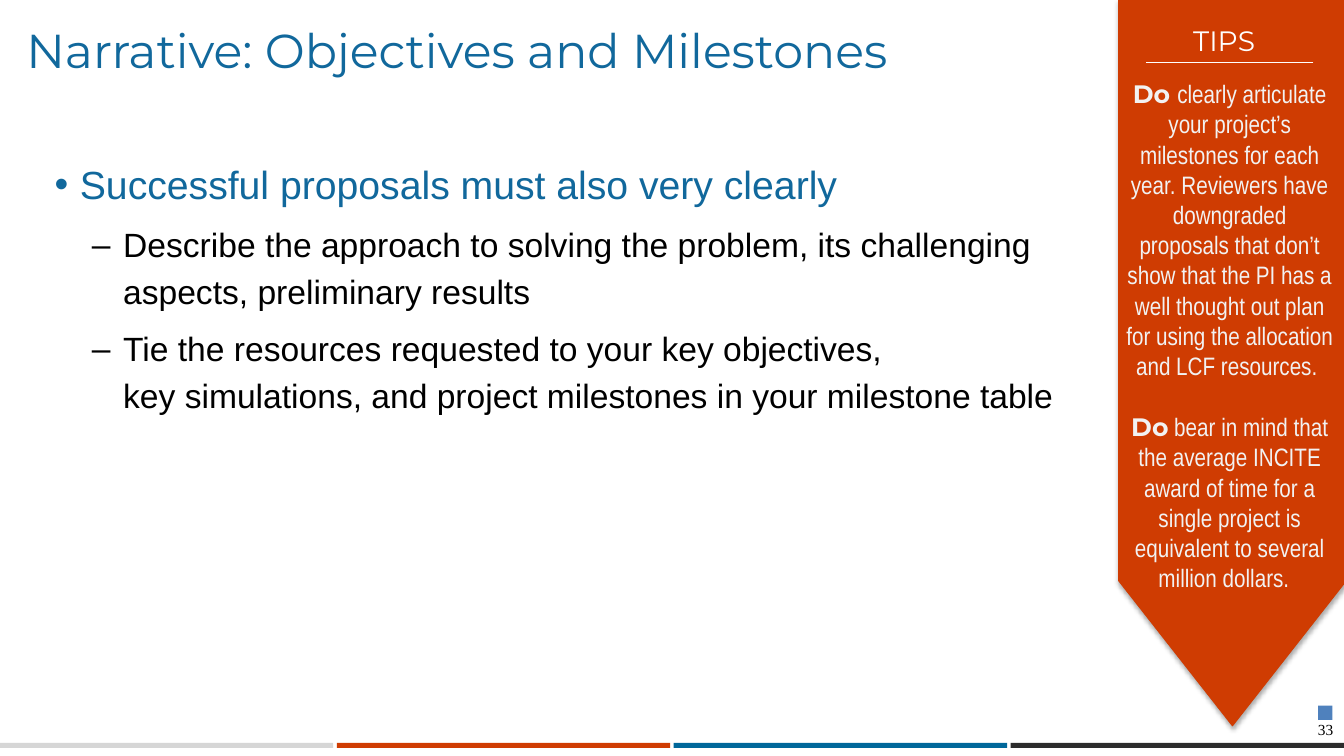
from dataclasses import dataclass

from lxml.etree import SubElement
from pptx import Presentation
from pptx.dml.color import RGBColor
from pptx.enum.shapes import MSO_CONNECTOR, MSO_SHAPE
from pptx.enum.text import MSO_ANCHOR, MSO_AUTO_SIZE, PP_ALIGN
from pptx.oxml.ns import qn
from pptx.util import Cm, Pt

BLUE = RGBColor(0x11, 0x68, 0x9C)
NAVY = RGBColor(0x00, 0x67, 0x9A)
RUST = RGBColor(0xCF, 0x3C, 0x02)
SILVER = RGBColor(0xD6, 0xD6, 0xD6)
DARK = RGBColor(0x2C, 0x2C, 0x2C)
STEEL = RGBColor(0x4F, 0x81, 0xBD)
PALE = RGBColor(0xF2, 0xF2, 0xF2)
WHITE = RGBColor(0xFF, 0xFF, 0xFF)
BLACK = RGBColor(0, 0, 0)


@dataclass
class Box:
    left: float
    top: float
    width: float
    height: float

    def place(self) -> tuple:
        return Cm(self.left), Cm(self.top), Cm(self.width), Cm(self.height)


@dataclass
class Point:
    text: str
    level: int
    mark: str
    size: int
    color: RGBColor
    left: float
    hang: float
    before: int


@dataclass
class Tip:
    lead: str
    text: str
    before: int


POINTS = [
    Point("Successful proposals must also very clearly",
          0, "•", 28, BLUE, 0.64, 0.64, 0),
    Point("Describe the approach to solving the problem, its challenging \n"
          "aspects, preliminary results",
          1, "–", 24, BLACK, 1.73, 0.79, 8),
    Point("Tie the resources requested to your key objectives, \n"
          "key simulations, and project milestones in your milestone table",
          1, "–", 24, BLACK, 1.73, 0.79, 8),
]
TIPS = [
    Tip("Do ", "clearly articulate your project’s milestones for each year. "
        "Reviewers have downgraded proposals that don’t show that the PI has "
        "a well thought out plan for using the allocation and LCF resources. ", 0),
    Tip("Do", " bear in mind that the average INCITE award of time for a "
        "single project is equivalent to several million dollars.  ", 22),
]


def style(font, name: str, size: int, color: RGBColor) -> None:
    font.name, font.size = name, Pt(size)
    font.color.rgb = color


def add_block(slide, kind, box: Box, color: RGBColor):
    shape = slide.shapes.add_shape(kind, *box.place())
    shape.shadow.inherit = False
    shape.fill.solid()
    shape.fill.fore_color.rgb = color
    shape.line.fill.background()
    return shape


def add_text(slide, box: Box, pad: bool = True):
    frame = slide.shapes.add_textbox(*box.place()).text_frame
    frame.word_wrap = True
    if not pad:
        frame.margin_left = frame.margin_right = 0
        frame.margin_top = frame.margin_bottom = 0
    return frame


def move(shape, box: Box):
    shape.left, shape.top, shape.width, shape.height = box.place()
    shape.text_frame.auto_size = MSO_AUTO_SIZE.NONE
    return shape.text_frame


def add_point(para, point: Point) -> None:
    para.text, para.level = point.text, point.level
    props = para._p.get_or_add_pPr()
    props.set("marL", str(Cm(point.left)))
    props.set("indent", str(-Cm(point.hang)))
    tint = SubElement(props, qn("a:buClr"))
    SubElement(tint, qn("a:srgbClr"), val=str(point.color))
    SubElement(props, qn("a:buFont"), typeface="Arial")
    SubElement(props, qn("a:buChar"), char=point.mark)
    para.line_spacing = 1.15
    para.space_before = Pt(point.before)
    style(para.font, "Arial", point.size, point.color)


def add_shade(shape) -> None:
    effects = shape._element.spPr.find(qn("a:effectLst"))
    shade = SubElement(effects, qn("a:outerShdw"), blurRad=str(Pt(3.1)),
                       dist=str(Pt(1.8)), dir="5400000", rotWithShape="0")
    tint = SubElement(shade, qn("a:srgbClr"), val=str(BLACK))
    SubElement(tint, qn("a:alpha"), val="32000")


def main() -> None:
    deck = Presentation()
    deck.slide_width, deck.slide_height = Cm(33.87), Cm(19.05)
    slide = deck.slides.add_slide(deck.slide_layouts[1])

    # Footer stripe and page number
    for i, color in enumerate((SILVER, RUST, NAVY, DARK)):
        add_block(slide, MSO_SHAPE.RECTANGLE, Box(8.49 * i, 18.72, 8.4, 0.13), color)
    page = add_text(slide, Box(31.9, 18.21, 1.7, 0.43), pad=False).paragraphs[0]
    page.text, page.alignment, page.line_spacing = "33", PP_ALIGN.RIGHT, 0.9
    style(page.font, "Times New Roman", 11, BLACK)

    # Title
    frame = move(slide.shapes.title, Box(0.41, 0.48, 30.48, 1.65))
    frame.vertical_anchor = MSO_ANCHOR.MIDDLE
    title = frame.paragraphs[0]
    title.text = "Narrative: Objectives and Milestones"
    title.alignment, title.line_spacing = PP_ALIGN.LEFT, 0.95
    style(title.font, "Montserrat", 34, BLUE)

    # Body list
    frame = move(slide.placeholders[1], Box(1.12, 3.73, 29.77, 8.36))
    for i, point in enumerate(POINTS):
        add_point(frame.add_paragraph() if i else frame.paragraphs[0], point)

    # Tips banner
    banner = add_block(slide, MSO_SHAPE.FLOWCHART_OFFPAGE_CONNECTOR,
                       Box(28.19, 0, 5.74, 18.29), RUST)
    banner.line.color.rgb, banner.line.width = RUST, Pt(0.75)
    add_shade(banner)
    head = add_text(slide, Box(29.82, 0.48, 2.34, 1.12)).paragraphs[0]
    head.text = "TIPS"
    style(head.font, "Montserrat", 20, WHITE)
    rule = slide.shapes.add_connector(MSO_CONNECTOR.STRAIGHT,
                                      Cm(33.1), Cm(1.57), Cm(28.88), Cm(1.57))
    rule.line.color.rgb, rule.line.width = WHITE, Pt(0.75)
    SubElement(rule._element.spPr, qn("a:effectLst"))

    # Tips text
    frame = add_text(slide, Box(28.12, 1.85, 5.74, 13.34))
    for i, tip in enumerate(TIPS):
        para = frame.add_paragraph() if i else frame.paragraphs[0]
        para.alignment, para.space_before = PP_ALIGN.CENTER, Pt(tip.before)
        for text, name, bold in ((tip.lead, "Montserrat", True),
                                 (tip.text, "Arial Narrow", False)):
            run = para.add_run()
            run.text, run.font.bold = text, bold
            style(run.font, name, 18, PALE)

    # Corner square
    add_block(slide, MSO_SHAPE.RECTANGLE, Box(33.22, 17.78, 0.36, 0.36), STEEL)
    deck.save("out.pptx")


if __name__ == "__main__":
    main()
